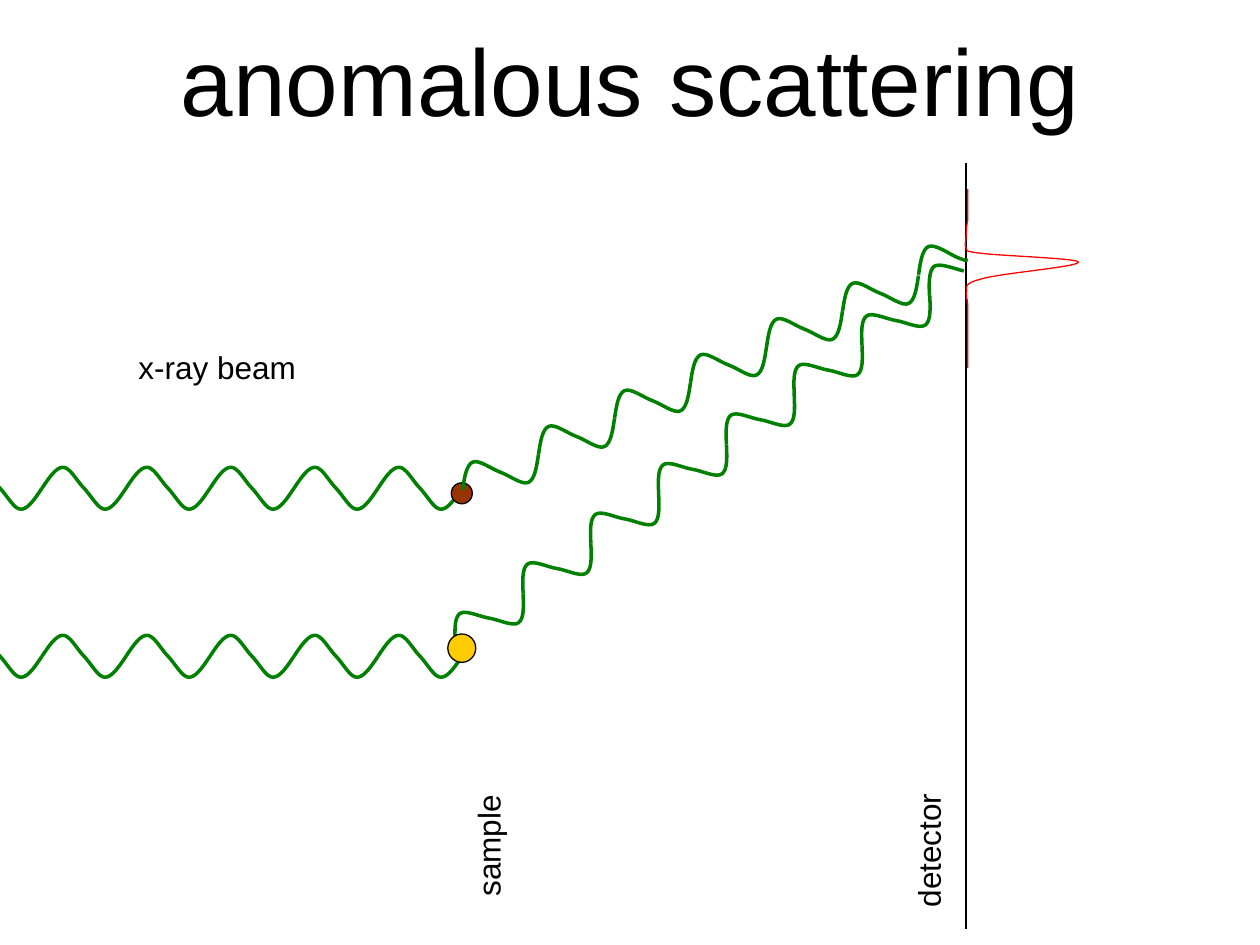
from dataclasses import dataclass
from math import cos, radians, sin

from lxml.etree import SubElement
from pptx import Presentation
from pptx.dml.color import RGBColor
from pptx.enum.shapes import MSO_CONNECTOR as Connector, MSO_SHAPE as Preset
from pptx.enum.text import MSO_ANCHOR as Anchor, MSO_AUTO_SIZE as AutoSize, PP_ALIGN as Align
from pptx.oxml.ns import qn
from pptx.util import Pt

COLORS = {"ink": "000000", "wave": "008000", "peak": "FF0000",
          "light atom": "993300", "heavy atom": "FFCC00"}
FONT = "Arial"
WAVELENGTH, WAVE_HEIGHT = 48, 24
WAVE_LEVELS = (12, 6, 0, 0, 0, 8, 12, 16, 24, 24, 24, 18, 12)
Points = list[tuple[float, float]]


@dataclass
class Label:
    text: str
    left: float
    top: float
    width: float
    height: float = 28.8
    rotation: float = 0
    size: float = 18
    is_title: bool = False


@dataclass
class WaveTrain:
    """Waves in a row from (x, y), climbing at angle, with an optional cut-off last wave."""
    x: float
    y: float
    angle: float
    count: int
    tail: Points
    grouped: bool = True


@dataclass
class Atom:
    left: float
    top: float
    width: float
    height: float
    color: str


TITLE = Label("anomalous scattering", 54, 0, 612, 90, size=54, is_title=True)
LABELS = [
    Label("sample", 242.6, 468.7, 72.7, rotation=270),
    Label("detector", 491, 471.6, 79.2, rotation=270),
    Label("x-ray beam", 72, 195.1, 104.4),
]
INCOMING = [WaveTrain(-24, y, 0, 6, []) for y in (375, 279)]
SCATTERED = [
    WaveTrain(260.2, 367.4, 36.2, 7, [
        (531.2, 169), (530.8, 162), (530.8, 154.8), (533.8, 152.2),
        (537, 149.8), (548, 154.5), (550.8, 154.8)]),
    WaveTrain(264.3, 280.1, 25.2, 6, [
        (524.9, 157), (525.9, 149.8), (527, 142.6), (530.6, 140.9),
        (534.2, 139.2), (543, 145.4), (546.5, 146.9),
        (550.1, 148.3), (551.5, 149), (553, 149)], grouped=False),
]
LIGHT_ATOM = Atom(257.9, 275.9, 12, 12, "light atom")
HEAVY_ATOM = Atom(255.9, 362.3, 16, 16.2, "heavy atom")
PEAK = [
    (553, 108), (553, 110.9), (553, 121.7), (553, 126),
    (552.2, 130.3), (552.2, 131.8), (552.2, 134.6),
    (552.2, 137.5), (550.8, 140.4), (552.2, 141.8),
    (553.7, 143.3), (549.4, 143.3), (560.2, 144.7),
    (571, 146.2), (616.3, 147.6), (616.3, 149.8),
    (616.3, 152.6), (569.5, 156.2), (559.4, 159.8),
    (548.6, 162.7), (553.7, 165.6), (552.2, 167.8),
    (551.5, 169.9), (553, 169.9), (553, 174.2),
    (553, 177.8), (553, 185.8), (553, 192.2),
    (553, 198), (553, 207.4), (553, 210.2),
]


def rgb(name: str) -> RGBColor:
    return RGBColor.from_string(COLORS[name])


def set_line(shape, color: str, width: float) -> None:
    shape.line.color.rgb = rgb(color)
    shape.line.width = Pt(width)


def add_curve(page, points: Points, color: str, width: float):
    """Draw a start point followed by cubic Bézier triples."""
    start, *rest = [(Pt(x), Pt(y)) for x, y in points]
    builder = page.shapes.build_freeform(*start)
    builder.add_line_segments(rest, close=False)
    curve = builder.convert_to_shape()
    segments = list(curve.element.iter(qn("a:lnTo")))
    outline = segments[0].getparent()
    for first in range(0, len(segments), 3):
        bezier = SubElement(outline, qn("a:cubicBezTo"))
        for segment in segments[first:first + 3]:
            bezier.append(segment[0])
            outline.remove(segment)
    curve.fill.background()
    curve.shadow.inherit = False
    set_line(curve, color, width)
    return curve


def add_wave_train(page, train: WaveTrain) -> None:
    curves = []
    slope = radians(train.angle)
    for index in range(train.count):
        distance = (index + 0.5) * WAVELENGTH
        left = train.x + distance * cos(slope) - WAVELENGTH / 2
        top = train.y - distance * sin(slope) - WAVE_HEIGHT / 2
        step = WAVELENGTH / (len(WAVE_LEVELS) - 1)
        points = [(left + i * step, top + level) for i, level in enumerate(WAVE_LEVELS)]
        wave = add_curve(page, points, "wave", 2)
        wave.rotation = -train.angle % 360
        curves.append(wave)
    if train.tail:
        curves.append(add_curve(page, train.tail, "wave", 2))
    if train.grouped:
        page.shapes.add_group_shape(curves)


def add_label(page, label: Label) -> None:
    box = page.shapes.add_textbox(
        Pt(label.left), Pt(label.top), Pt(label.width), Pt(label.height))
    box.rotation = label.rotation
    frame = box.text_frame
    frame.word_wrap = label.is_title
    frame.auto_size = AutoSize.NONE if label.is_title else AutoSize.SHAPE_TO_FIT_TEXT
    para = frame.paragraphs[0]
    if label.is_title:
        frame.vertical_anchor = Anchor.MIDDLE
        para.alignment = Align.CENTER
    para.text = label.text
    para.font.name = FONT
    para.font.size = Pt(label.size)
    para.font.color.rgb = rgb("ink")


def add_atom(page, atom: Atom) -> None:
    dot = page.shapes.add_shape(
        Preset.OVAL, Pt(atom.left), Pt(atom.top), Pt(atom.width), Pt(atom.height))
    dot.shadow.inherit = False
    dot.fill.solid()
    dot.fill.fore_color.rgb = rgb(atom.color)
    set_line(dot, "ink", 0.75)


def add_detector(page) -> None:
    screen = page.shapes.add_connector(
        Connector.STRAIGHT, Pt(552), Pt(93), Pt(552), Pt(531))
    set_line(screen, "ink", 1)
    SubElement(screen.element.spPr, qn("a:effectLst"))


def main() -> None:
    deck = Presentation()
    deck.slide_width, deck.slide_height = Pt(720), Pt(540)
    page = deck.slides.add_slide(deck.slide_layouts[6])
    add_detector(page)
    for label in LABELS:
        add_label(page, label)
    for train in INCOMING:
        add_wave_train(page, train)
    add_label(page, TITLE)
    add_atom(page, LIGHT_ATOM)
    for train in SCATTERED:
        add_wave_train(page, train)
    add_curve(page, PEAK, "peak", 0.75)
    add_atom(page, HEAVY_ATOM)
    deck.save("out.pptx")


if __name__ == "__main__":
    main()
